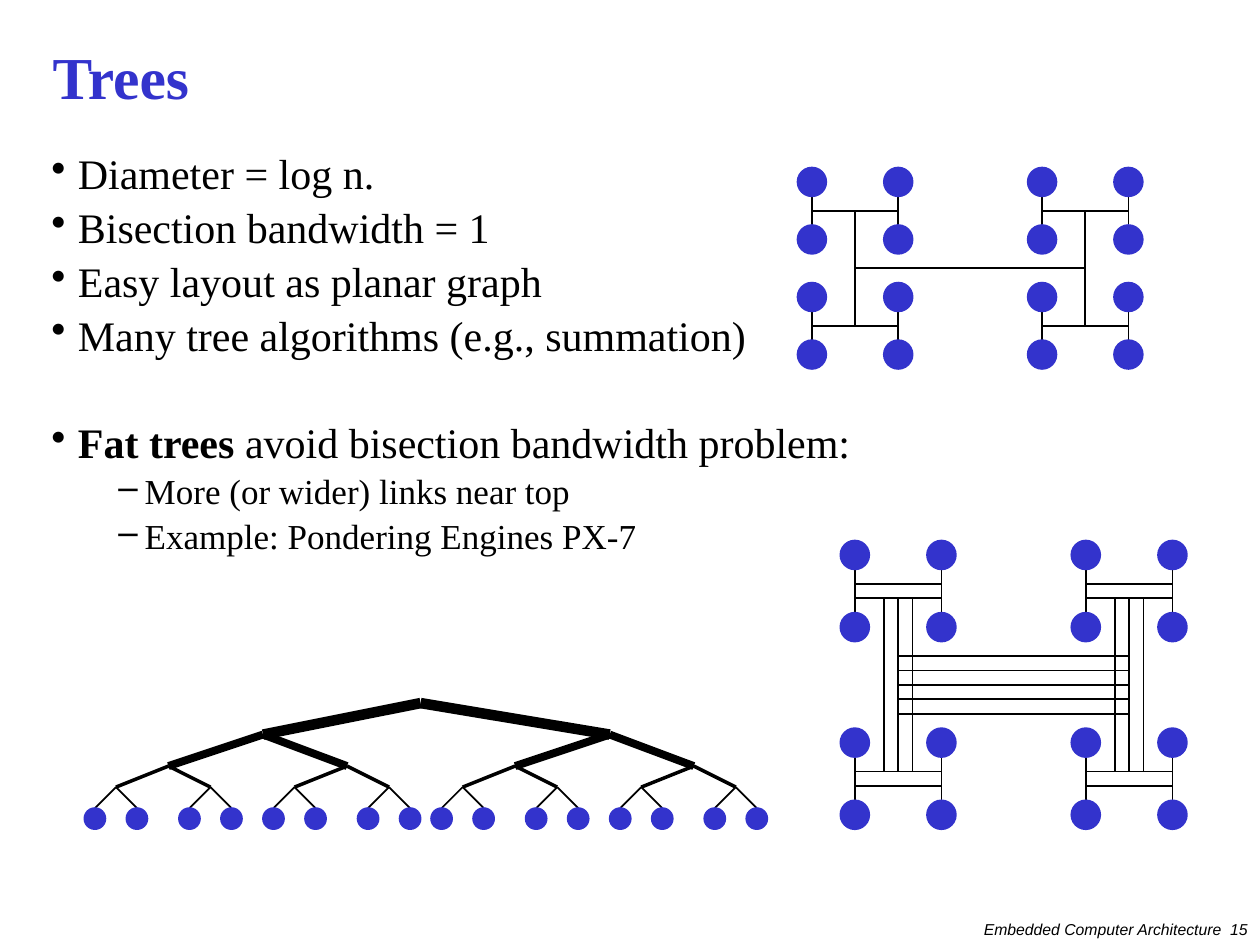
from pptx import Presentation
from pptx.dml.color import RGBColor
from pptx.enum.shapes import MSO_CONNECTOR as Link, MSO_SHAPE as Shape
from pptx.enum.text import MSO_ANCHOR as Anchor, PP_ALIGN as Align
from pptx.oxml.ns import qn
from pptx.util import Inches, Pt
from lxml.etree import SubElement as Sub

BLUE = RGBColor(0x33, 0x33, 0xCC)
BLACK = RGBColor(0, 0, 0)
SERIF = "Times New Roman"
SANS = "Arial"

# level, space before, runs as (text, bold)
POINTS = [
    (0, 6.3, [("Diameter = log n.", False)]),
    (0, 4.8, [("Bisection bandwidth = 1", False)]),
    (0, 4.8, [("Easy layout as planar graph", False)]),
    (0, 4.8, [("Many tree algorithms (e.g., summation)", False)]),
    (0, 35.5, [("Fat trees", True),
               (" avoid bisection bandwidth problem:", False)]),
    (1, 4, [("More (or wider) links near top", False)]),
    (1, 4, [("Example: Pondering Engines PX-7", False)]),
]
# text size, left margin, bullet
LEVELS = [(24, 0.21, "•"), (20, 0.74, "–")]

# drop to the level below, left and right reach, line width
FORKS = [(3, -15, 18, 6), (3, -9, 8, 4.5), (2, -5, 4, 2), (2, -2, 2, 1)]


def style(run, size, name, color=BLACK, bold=False, italic=False):
    font = run.font
    font.size, font.name = Pt(size), name
    font.bold, font.italic = bold, italic
    font.color.rgb = color


def text_box(slide, box):
    frame = slide.shapes.add_textbox(*map(Inches, box)).text_frame
    frame.word_wrap = True
    return frame


def label(slide, box, text, **look):
    frame = text_box(slide, box)
    frame.text = text
    frame.vertical_anchor = Anchor.MIDDLE
    par = frame.paragraphs[0]
    style(par.runs[0], **look)
    return par


def bullets(slide, box):
    frame = text_box(slide, box)
    for i, (level, gap, runs) in enumerate(POINTS):
        par = frame.add_paragraph() if i else frame.paragraphs[0]
        size, left, mark = LEVELS[level]
        par.level = level
        par.line_spacing, par.space_before = 0.9, Pt(gap)
        for text, bold in runs:
            run = par.add_run()
            run.text = text
            style(run, size, SERIF, bold=bold)
        # Hanging indent, bullet sign and its size
        props = par._p.get_or_add_pPr()
        props.set("marL", str(Inches(left)))
        props.set("indent", str(Inches(-0.21)))
        Sub(props, qn("a:buChar")).set("char", mark)
        Sub(par._p, qn("a:endParaRPr")).set("sz", str(size * 100))


def pen(slide, box, cols):
    """Return functions that draw lines and dots on a grid in the box."""
    shapes = slide.shapes.add_group_shape().shapes
    left, top, width, _ = box
    unit = width / cols

    def spot(x, y):
        return Inches(left + x * unit), Inches(top + y * unit)

    def line(x1, y1, x2, y2, width=1):
        link = shapes.add_connector(Link.STRAIGHT, *spot(x1, y1), *spot(x2, y2))
        link.line.color.rgb = BLACK
        link.line.width = Pt(width)
        Sub(link._element.spPr, qn("a:effectLst"))

    def dot(x, y):
        size = Inches(2 * unit)
        disc = shapes.add_shape(Shape.OVAL, *spot(x - 1, y - 1), size, size)
        disc.shadow.inherit = False
        disc.fill.solid()
        disc.fill.fore_color.rgb = disc.line.color.rgb = BLUE
        disc.line.width = Pt(1)

    return line, dot


def h_tree(slide, box, gap, pitch, bars, stems, trunk):
    """Four clusters of four nodes; each list holds parallel links."""
    line, dot = pen(slide, box, 24)
    for y in trunk:
        line(4, y, 20, y)
    for x in (0, 16):
        for stem in stems:
            line(x + stem, bars[-1], x + stem, pitch + bars[0])
        for y in (0, pitch):
            for bar in bars:
                line(x + 1, y + bar, x + 7, y + bar)
            for col in (x + 1, x + 7):
                line(col, y + 2, col, y + gap)
                dot(col, y + 1)
                dot(col, y + 1 + gap)


def fat_tree(slide, box):
    line, dot = pen(slide, box, 65)
    nodes, y = [32], 0
    for drop, left, right, width in FORKS:
        kids = []
        for x in nodes:
            for kid in (x + left, x + right):
                line(x, y, kid, y + drop, width)
                kids.append(kid)
        nodes, y = kids, y + drop
    for x in nodes:
        dot(x, y + 1)


def main():
    deck = Presentation()
    deck.slide_width, deck.slide_height = Inches(10), Inches(7.5)
    slide = deck.slides.add_slide(deck.slide_layouts[6])

    # Footer, title and text
    foot = label(slide, (7.13, 7.25, 2.87, 0.25),
                 "Embedded Computer Architecture  15",
                 size=9, name=SANS, italic=True)
    foot.alignment = Align.RIGHT
    title = label(slide, (0.32, 0.25, 9.35, 0.8), "Trees",
                  size=34, name=SERIF, color=BLUE, bold=True)
    title.line_spacing = 0.8
    bullets(slide, (0.31, 1.17, 9.39, 5.91))

    # Plain layout, fat layout, and fat tree from its root
    h_tree(slide, (6.33, 1.33, 2.74, 1.6), gap=4, pitch=8,
           bars=[3], stems=[4], trunk=[7])
    h_tree(slide, (6.67, 4.29, 2.75, 2.29), gap=5, pitch=13,
           bars=[3, 4], stems=[3, 4, 5], trunk=range(8, 13))
    fat_tree(slide, (0.67, 5.58, 5.42, 1))

    deck.save("out.pptx")


if __name__ == "__main__":
    main()
